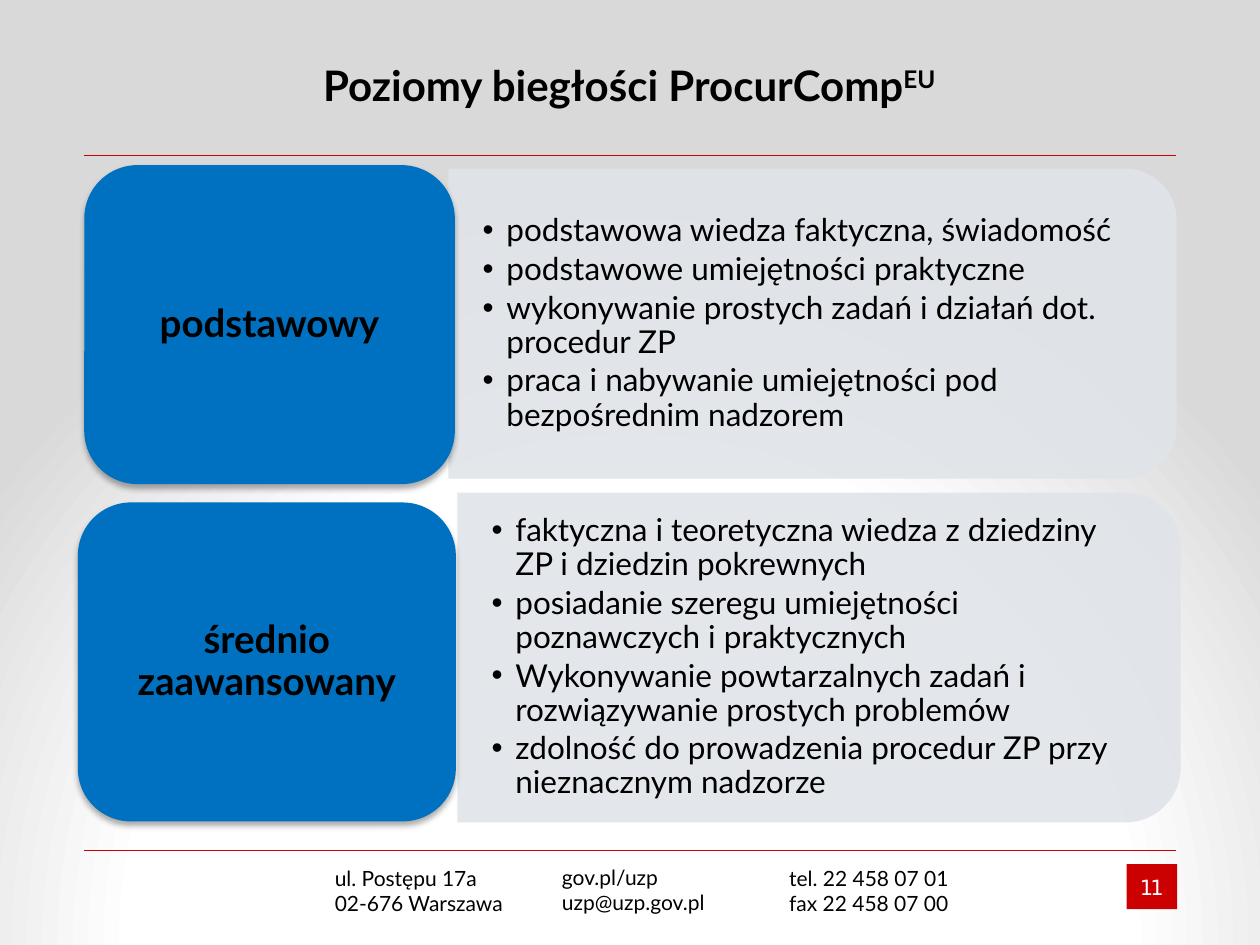
from lxml.etree import SubElement
from pptx import Presentation
from pptx.dml.color import RGBColor
from pptx.enum.shapes import MSO_CONNECTOR, MSO_SHAPE
from pptx.enum.text import MSO_ANCHOR, MSO_AUTO_SIZE, PP_ALIGN
from pptx.oxml import parse_xml
from pptx.oxml.ns import nsdecls, qn
from pptx.util import Cm, Pt

COLORS = {
    "red": "CC0000",
    "blue": "0070C0",
    "panel": "E0E4E9",
    "text": "000000",
    "white": "FFFFFF",
    "grey": "D9D9D9",
}
FONT = "Lato"
CORNER_INSET = 0.0488  # text inset of a rounded corner, as a share of the height

CONTACTS = [
    (17.32, "ul. Postępu 17a\n02-676 Warszawa"),
    (17.30, "gov.pl/uzp\nuzp@uzp.gov.pl"),
    (17.32, "tel. 22 458 07 01\nfax 22 458 07 00"),
]

# Each level: name, label place, panel place (left, top, width, height), points
LEVELS = [
    ("podstawowy", (1.7, 3.33, 7.47, 6.43), (9.04, 3.4, 14.68, 6.25), [
        "podstawowa wiedza faktyczna, świadomość",
        "podstawowe umiejętności praktyczne",
        "wykonywanie prostych zadań i działań dot. procedur ZP",
        "praca i nabywanie umiejętności pod bezpośrednim nadzorem",
    ]),
    ("średnio zaawansowany", (1.57, 10.13, 7.62, 6.43), (9.22, 9.93, 14.58, 6.65), [
        "faktyczna i teoretyczna wiedza z dziedziny ZP i dziedzin pokrewnych",
        "posiadanie szeregu umiejętności poznawczych i praktycznych",
        "Wykonywanie powtarzalnych zadań i rozwiązywanie prostych problemów",
        "zdolność do prowadzenia procedur ZP przy nieznacznym nadzorze",
    ]),
]


def color(name):
    return RGBColor.from_string(COLORS[name])


def lengths(place):
    return [Cm(value) for value in place]


def style_text(frame, size, name="text", bold=False, font=FONT, align=PP_ALIGN.LEFT):
    for para in frame.paragraphs:
        para.alignment = align
        for span in para.runs:
            span.font.size = Pt(size)
            span.font.name = font
            span.font.bold = bold
            span.font.color.rgb = color(name)


def set_margins(frame, side, end):
    frame.margin_left = frame.margin_right = Cm(side)
    frame.margin_top = frame.margin_bottom = Cm(end)


def paint_background(page):
    page.background.fill.solid()
    holder = page.element.find(".//" + qn("p:bgPr"))
    stops = "".join(
        f'<a:gs pos="{position}"><a:srgbClr val="{COLORS[name]}"/></a:gs>'
        for position, name in [(0, "white"), (63000, "white"), (100000, "grey")])
    holder.replace(holder[0], parse_xml(
        f'<a:gradFill {nsdecls("a")} rotWithShape="1"><a:gsLst>{stops}</a:gsLst>'
        '<a:path path="circle"><a:fillToRect l="50000" t="130000" r="50000" b="-30000"/>'
        '</a:path></a:gradFill>'))


def add_rule(page, top):
    rule = page.shapes.add_connector(
        MSO_CONNECTOR.STRAIGHT, Cm(1.7), Cm(top), Cm(23.7), Cm(top))
    rule.line.color.rgb = color("red")
    rule.line.width = Pt(0.25)
    SubElement(rule._element.spPr, qn("a:effectLst"))


def add_block(page, kind, place, fill):
    block = page.shapes.add_shape(kind, *lengths(place))
    block.shadow.inherit = False
    block.fill.solid()
    block.fill.fore_color.rgb = color(fill)
    block.line.fill.background()
    return block


def add_text_box(page, place, text):
    box = page.shapes.add_textbox(*lengths(place))
    box.text_frame.word_wrap = True
    box.text_frame.text = text
    return box


def add_title(page):
    title = page.shapes.title
    title.left, title.top, title.width, title.height = lengths((1.57, 0.33, 22.23, 2.74))
    frame = title.text_frame
    frame.text = "Poziomy biegłości ProcurComp"
    frame.vertical_anchor = MSO_ANCHOR.MIDDLE
    raised = frame.paragraphs[0].add_run()
    raised.text = "EU"
    style_text(frame, 24, bold=True, align=PP_ALIGN.CENTER)
    raised.font._element.set("baseline", "30000")


def add_page_number(page):
    badge = add_block(page, MSO_SHAPE.RECTANGLE, (22.71, 17.42, 1.02, 0.91), "red")
    frame = badge.text_frame
    frame.text = "11"
    frame.word_wrap = False
    frame.vertical_anchor = MSO_ANCHOR.MIDDLE
    set_margins(frame, 0, 0)
    style_text(frame, 12, "white", font="DejaVu Sans", align=PP_ALIGN.CENTER)
    frame.paragraphs[0].runs[0].font._element.set("spc", "-150")


def add_panel(page, place, points):
    left, top, width, height = place
    # The shape is turned a quarter, so its own width and height are swapped
    shift = (width - height) / 2
    panel = add_block(page, MSO_SHAPE.ROUND_2_SAME_RECTANGLE,
                      (left + shift, top - shift, height, width), "panel")
    panel.rotation = 90
    shade = panel._element.spPr.find(".//" + qn("a:srgbClr"))
    SubElement(shade, qn("a:alpha"), val="90000")

    inset = height * CORNER_INSET
    box = add_text_box(page, (left, top + inset, width - inset, height - 2 * inset),
                       "\n".join(points))
    frame = box.text_frame
    frame.vertical_anchor = MSO_ANCHOR.MIDDLE
    set_margins(frame, 0.69, 0.36)
    for para in frame.paragraphs:
        para.level = 1
        properties = para._p.get_or_add_pPr()
        properties.set("marL", str(Cm(0.48)))
        properties.set("indent", str(-Cm(0.48)))
        SubElement(properties, qn("a:buFont"), typeface="Arial")
        SubElement(properties, qn("a:buChar"), char="•")
        para.line_spacing = 0.9
        para.space_after = Pt(2.7)
    style_text(frame, 18)


def add_label(page, place, name):
    label = add_block(page, MSO_SHAPE.ROUNDED_RECTANGLE, place, "blue")
    effects = label._element.spPr.find(qn("a:effectLst"))
    effects.append(parse_xml(
        f'<a:outerShdw {nsdecls("a")} blurRad="{Pt(3.5)}" dist="{Pt(2.2)}" dir="5400000" '
        f'rotWithShape="0"><a:srgbClr val="{COLORS["text"]}"><a:alpha val="32000"/>'
        '</a:srgbClr></a:outerShdw>'))
    frame = label.text_frame
    frame.text = name
    frame.word_wrap = True
    frame.vertical_anchor = MSO_ANCHOR.MIDDLE
    set_margins(frame, 0.23, 0.12)
    style_text(frame, 22, bold=True, align=PP_ALIGN.CENTER)
    frame.paragraphs[0].line_spacing = 0.9


def main():
    deck = Presentation()
    deck.slide_width, deck.slide_height = Cm(25.4), Cm(19.05)
    page = deck.slides.add_slide(deck.slide_layouts[5])
    paint_background(page)

    # Frame: rules, page number and contact details
    for top in (17.15, 3.12):
        add_rule(page, top)
    add_page_number(page)
    for column, (top, text) in enumerate(CONTACTS):
        contact = add_text_box(page, (6.5 + 4.58 * column, top, 4.19, 1.27), text)
        contact.text_frame.auto_size = MSO_AUTO_SIZE.SHAPE_TO_FIT_TEXT
        style_text(contact.text_frame, 12)

    # Content: title and one row for each level
    add_title(page)
    for name, label_place, panel_place, points in LEVELS:
        add_panel(page, panel_place, points)
        add_label(page, label_place, name)

    deck.save("out.pptx")


if __name__ == "__main__":
    main()
